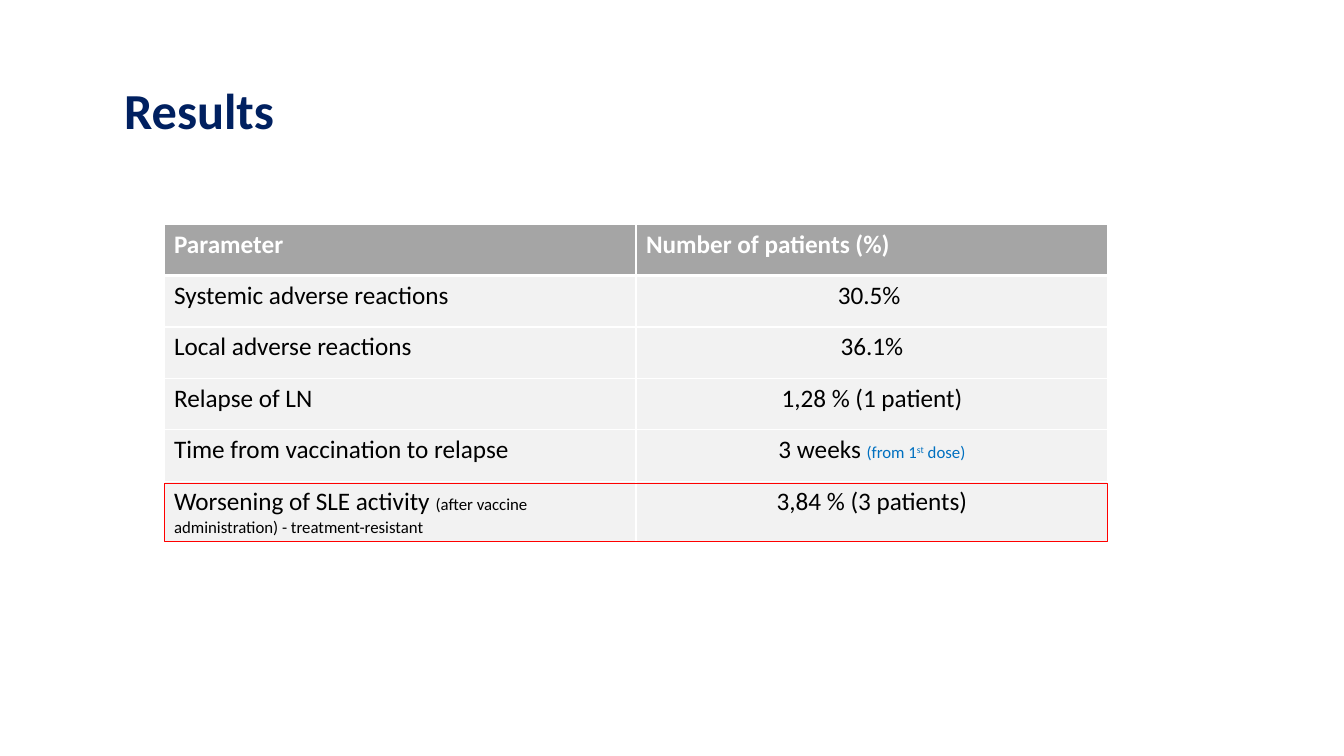
import pptx
import pptx.dml.color
import pptx.enum.shapes
import pptx.enum.text
import pptx.oxml
import pptx.oxml.ns
import pptx.util

PX = 914400 / 100.8
ALIGN = pptx.enum.text.PP_ALIGN
NORMAL = {"size": 18, "color": "000000"}
HEADING = {"size": 18, "color": "FFFFFF", "bold": True}
SMALL = {"size": 12, "color": "000000"}
DOSE = {"size": 12, "color": "0070C0"}
ROWS = [
    ([("Parameter", HEADING)], [("Number of patients (%)", HEADING)]),
    ([("Systemic adverse reactions", NORMAL)], [("30.5% ", NORMAL)]),
    ([("Local adverse reactions", NORMAL)], [("36.1%", NORMAL)]),
    ([("Relapse of LN", NORMAL)], [("1,28 % (1 patient)", NORMAL)]),
    ([("Time from vaccination to relapse", NORMAL)],
     [("3 weeks ", NORMAL), ("(from 1", DOSE),
      ("st", {**DOSE, "baseline": 30}), (" dose)", DOSE)]),
    ([("Worsening of SLE activity ", NORMAL),
      ("(after vaccine administration) - treatment-resistant", SMALL)],
     [("3,84 % (3 patients)", NORMAL)]),
]


def px(length):
    """Turn a length in px into EMU."""
    return pptx.util.Emu(round(length * PX))


def rgb(code):
    """Turn a hex string into a colour."""
    return pptx.dml.color.RGBColor.from_string(code)


def write(paragraph, runs, align=ALIGN.LEFT):
    """Fill a paragraph with formatted runs."""
    paragraph.alignment = align
    for text, style in runs:
        run = paragraph.add_run()
        run.text = text
        run.font.color.rgb = rgb(style["color"])
        values = {"name": "Calibri", "size": pptx.util.Pt(style["size"]),
                  "bold": style.get("bold", False)}
        for attribute, value in values.items():
            setattr(run.font, attribute, value)
        if "baseline" in style:
            run._r.get_or_add_rPr().set("baseline", str(style["baseline"] * 1000))


def add_borders(cell, widths, color):
    """Draw the four sides of a cell, with widths in points."""
    for side, width in widths.items():
        cell._tc.get_or_add_tcPr().append(pptx.oxml.parse_xml(
            f'<a:ln{side} {pptx.oxml.ns.nsdecls("a")} w="{pptx.util.Pt(width)}">'
            f'<a:solidFill><a:srgbClr val="{color}"/></a:solidFill></a:ln{side}>'))


def add_title(slide, text, left, top, width, height):
    """Place and format the slide title."""
    title = slide.shapes.title
    box = {"left": left, "top": top, "width": width, "height": height}
    for attribute, value in box.items():
        setattr(title, attribute, px(value))
    title.text_frame.vertical_anchor = pptx.enum.text.MSO_ANCHOR.MIDDLE
    heading = title.text_frame.paragraphs[0]
    heading.line_spacing = 0.9
    write(heading, [(text, {"size": 36, "color": "002060", "bold": True})])


def add_results(slide, left, top, width, height):
    """Place the results table and outline its last row."""
    results = slide.shapes.add_table(
        len(ROWS), 2, px(left), px(top), px(width), px(height)).table
    for row, entries in enumerate(ROWS):
        for column, runs in enumerate(entries):
            cell = results.cell(row, column)
            add_borders(cell, {"L": 1, "R": 1, "T": 3 if row == 1 else 1,
                               "B": 3 if row == 0 else 1}, "FFFFFF")
            cell.fill.solid()
            cell.fill.fore_color.rgb = rgb("F2F2F2" if row else "A5A5A5")
            write(cell.text_frame.paragraphs[0], runs,
                  ALIGN.CENTER if row and column else ALIGN.LEFT)
    highlight = slide.shapes.add_shape(
        pptx.enum.shapes.MSO_SHAPE.RECTANGLE,
        px(left), px(top + 260), px(width), px(58))
    highlight.shadow.inherit = False
    highlight.fill.background()
    highlight.line.color.rgb = rgb("FF0000")
    highlight.line.width = pptx.util.Pt(0.75)


def main():
    """Build and save the slide."""
    deck = pptx.Presentation()
    deck.slide_width, deck.slide_height = px(1344), px(756)
    slide = deck.slides.add_slide(deck.slide_layouts[5])
    add_title(slide, "Results", 114, 40, 1137, 146)
    add_results(slide, 164, 224, 944, 309)
    deck.save("out.pptx")


if __name__ == "__main__":
    main()
